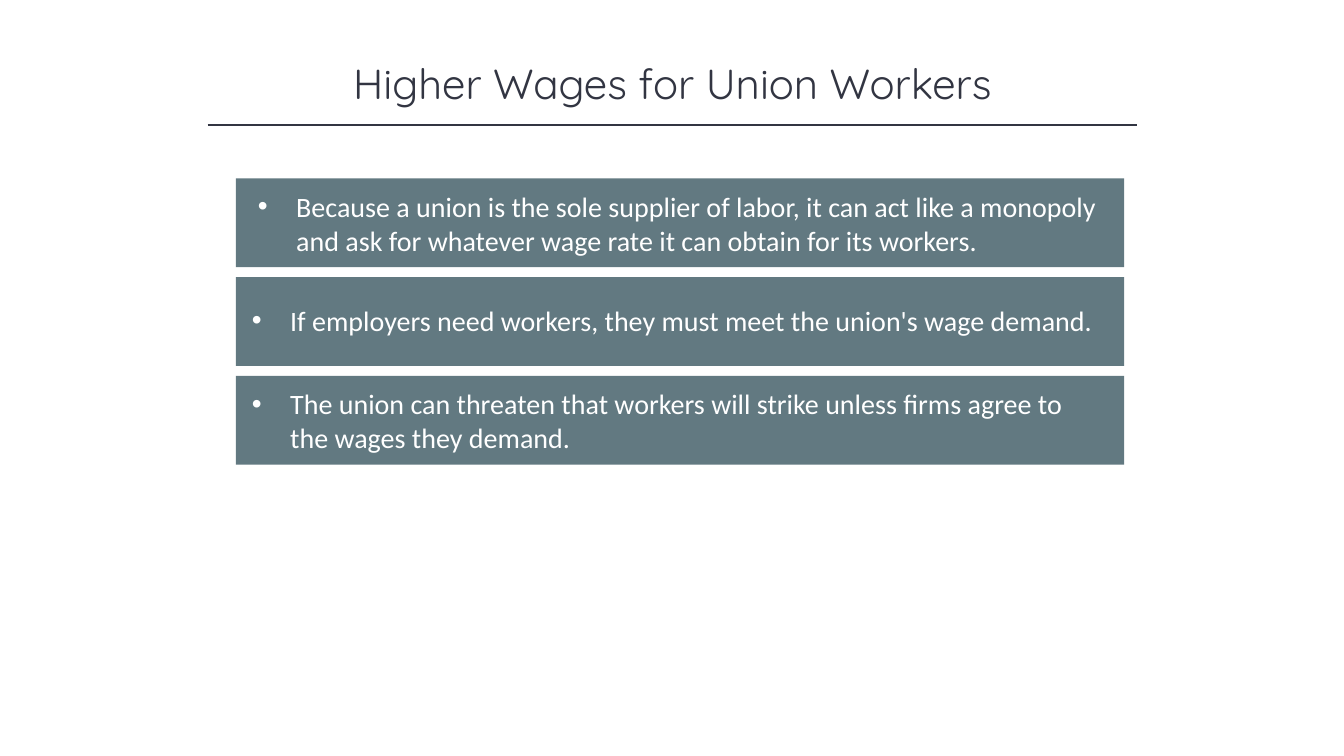
from dataclasses import dataclass

from lxml import etree
from pptx import Presentation
from pptx.dml.color import RGBColor
from pptx.enum import shapes, text
from pptx.oxml.ns import qn
from pptx.util import Inches, Pt


@dataclass(frozen=True)
class Theme:
    ink: str = "323542"
    slate: str = "627981"
    white: str = "FFFFFF"
    head: str = "Quicksand"
    body: str = "Calibri"
    big: int = 30
    mid: int = 20


def write(frame, words, *, font, size, color, align, bullet=False):
    frame.word_wrap = True
    frame.auto_size = text.MSO_AUTO_SIZE.SHAPE_TO_FIT_TEXT
    para = frame.paragraphs[0]
    para.alignment = align
    if bullet:
        props = para._p.get_or_add_pPr()
        props.set("marL", str(Inches(0.38)))
        props.set("indent", str(-Inches(0.38)))
        etree.SubElement(props, qn("a:buFont")).set("typeface", "Arial")
        etree.SubElement(props, qn("a:buChar")).set("char", "•")
    run = para.add_run()
    run.text = words
    run.font.name = font
    run.font.size = Pt(size)
    run.font.color.rgb = RGBColor.from_string(color)


class Deck:
    """Holds the theme and the slide being built."""

    def __init__(self, theme):
        self.theme = theme
        self.show = Presentation()
        self.show.slide_width = Inches(13.33)
        self.show.slide_height = Inches(7.5)
        self.slide = self.show.slides.add_slide(self.show.slide_layouts[5])

    def title(self, words, left, top, width, height):
        box = self.slide.shapes.title
        box.left, box.top = Inches(left), Inches(top)
        box.width, box.height = Inches(width), Inches(height)
        box.text_frame.vertical_anchor = text.MSO_ANCHOR.MIDDLE
        write(box.text_frame, words, font=self.theme.head, size=self.theme.big,
              color=self.theme.ink, align=text.PP_ALIGN.CENTER)

    def rule(self, left, right, top):
        line = self.slide.shapes.add_connector(
            shapes.MSO_CONNECTOR.STRAIGHT,
            Inches(left), Inches(top), Inches(right), Inches(top))
        line.line.color.rgb = RGBColor.from_string(self.theme.ink)
        line.line.width = Pt(1)
        etree.SubElement(line._element.spPr, qn("a:effectLst"))

    def block(self, group, left, top, width, height):
        box = group.shapes.add_shape(
            shapes.MSO_SHAPE.RECTANGLE,
            Inches(left), Inches(top), Inches(width), Inches(height))
        box.shadow.inherit = False
        box.fill.solid()
        box.fill.fore_color.rgb = RGBColor.from_string(self.theme.slate)
        box.line.fill.background()
        return box

    def point(self, words, top, inset, drop, height):
        group = self.slide.shapes.add_group_shape()
        left = 2.34
        self.block(group, left, top, 8.81, 0.88)
        box = self.block(group, left + inset, top + drop, 8.54, height)
        box.text_frame.vertical_anchor = text.MSO_ANCHOR.TOP
        write(box.text_frame, words, font=self.theme.body, size=self.theme.mid,
              color=self.theme.white, align=text.PP_ALIGN.LEFT, bullet=True)


def main():
    deck = Deck(Theme())
    deck.title("Higher Wages for Union Workers", 1.67, 0.52, 10, 0.61)
    deck.rule(2.06, 11.28, 1.24)
    points = [
        ("Because a union is the sole supplier of labor, it can act like a "
         "monopoly and ask for whatever wage rate it can obtain for its "
         "workers.", 0.12, 0.06, 0.77),
        ("If employers need workers, they must meet the union's wage demand.",
         0.06, 0.21, 0.44),
        ("The union can threaten that workers will strike unless firms agree "
         "to the wages they demand.", 0.06, 0.06, 0.77),
    ]
    for row, (words, inset, drop, height) in enumerate(points):
        deck.point(words, 1.77 + 0.98 * row, inset, drop, height)
    deck.show.save("out.pptx")


if __name__ == "__main__":
    main()
